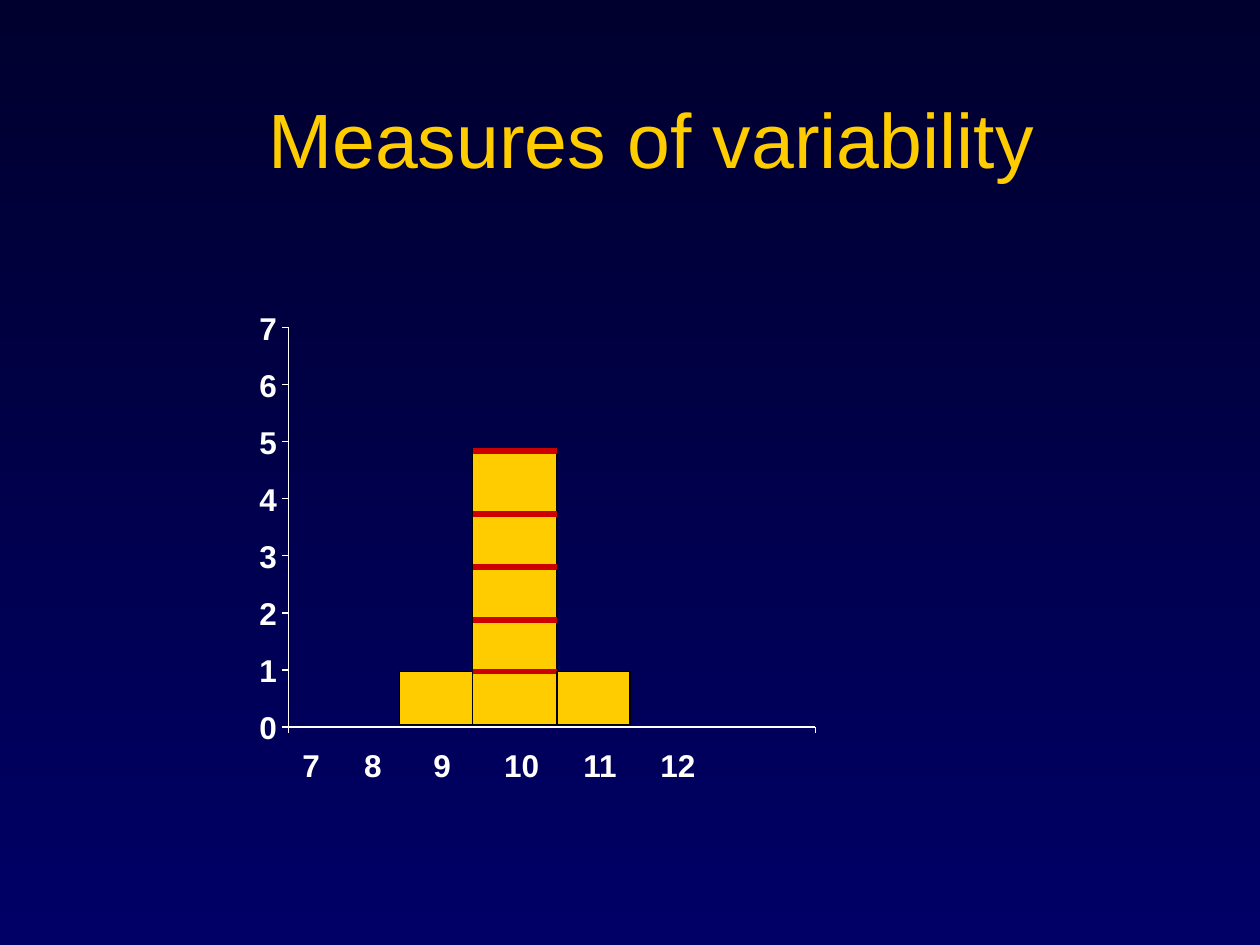
from lxml.etree import SubElement
from pptx import Presentation
from pptx.dml.color import RGBColor
from pptx.enum.shapes import MSO_CONNECTOR as Connector, MSO_SHAPE as Shape
from pptx.enum.text import MSO_ANCHOR as Anchor, MSO_AUTO_SIZE as AutoSize, PP_ALIGN as Align
from pptx.oxml.ns import qn
from pptx.util import Inches, Pt

GOLD, WHITE, BLACK, RED = "FFCC00", "FFFFFF", "000000", "CC0000"


def color(hex_value):
    return RGBColor.from_string(hex_value)


def format_text(paragraph, size, hex_value, bold=False):
    for run in paragraph.runs:
        run.font.name = "Arial"
        run.font.size = Pt(size)
        run.font.bold = bold
        run.font.color.rgb = color(hex_value)


def add_line(slide, x1, y1, x2, y2, hex_value=WHITE, width=0.75):
    line = slide.shapes.add_connector(
        Connector.STRAIGHT, Inches(x1), Inches(y1), Inches(x2), Inches(y2))
    line.line.color.rgb = color(hex_value)
    line.line.width = Pt(width)
    SubElement(line._element.spPr, qn("a:effectLst"))


def add_bar(slide, left, top, width, height):
    bar = slide.shapes.add_shape(
        Shape.RECTANGLE, Inches(left), Inches(top), Inches(width), Inches(height))
    bar.shadow.inherit = False
    bar.fill.solid()
    bar.fill.fore_color.rgb = color(GOLD)
    bar.line.color.rgb = color(BLACK)
    bar.line.width = Pt(0.75)


def add_label(slide, text, left, top, width, wrap=False):
    """Add a bold axis label without margins and return its text frame."""
    box = slide.shapes.add_textbox(Inches(left), Inches(top), Inches(width), Inches(0.3))
    frame = box.text_frame
    frame.margin_left = frame.margin_right = frame.margin_top = frame.margin_bottom = 0
    frame.word_wrap = wrap
    frame.auto_size = AutoSize.SHAPE_TO_FIT_TEXT
    frame.text = text
    format_text(frame.paragraphs[0], 18, WHITE, bold=True)
    return frame


def set_background(slide, top_color, bottom_color):
    fill = slide.background.fill
    fill.gradient()
    fill.gradient_angle = 270
    for stop, position, hex_value in zip(fill.gradient_stops, (0, 1), (top_color, bottom_color)):
        stop.position = position
        stop.color.rgb = color(hex_value)


def set_title(slide, text, left, top, width, height):
    title = slide.shapes.title
    title.left, title.top = Inches(left), Inches(top)
    title.width, title.height = Inches(width), Inches(height)
    title.text_frame.text = text
    title.text_frame.vertical_anchor = Anchor.MIDDLE
    paragraph = title.text_frame.paragraphs[0]
    paragraph.alignment = Align.CENTER
    format_text(paragraph, 44, GOLD)


def add_value_axis(slide, left, top, height, maximum):
    bottom = top + height
    add_line(slide, left, bottom, left, top)
    for value in range(maximum + 1):
        y = bottom - value * height / maximum
        add_line(slide, left, y, left - 0.05, y)
        add_label(slide, str(value), left - 0.23, y - 0.15, 0.14)


def add_category_axis(slide, left, top, width, categories, tab_stops):
    add_line(slide, left, top, left + width, top)
    for x in (left, left + width):
        add_line(slide, x, top, x, top + 0.05)
    frame = add_label(slide, "\t".join(categories), left + 0.04, top + 0.15, 3.19, wrap=True)
    frame.margin_left = Inches(0.07)
    properties = frame.paragraphs[0]._p.get_or_add_pPr()
    tab_list = SubElement(properties, qn("a:tabLst"))
    for stop in tab_stops:
        SubElement(tab_list, qn("a:tab"), pos=str(Inches(stop)), algn="l")


def add_bars(slide, left, bottom):
    """Draw the low bars beside the tall one, which red lines divide."""
    side_width, side_height = 0.58, 0.42
    middle_width, middle_height = 0.67, 2.17
    middle_left = left + side_width
    add_bar(slide, middle_left, bottom - middle_height, middle_width, middle_height)
    for height in (side_height, 0.83, 1.25, 1.67, middle_height):
        y = bottom - height
        add_line(slide, middle_left, y, middle_left + middle_width, y, RED, 3)
    for x in (left, middle_left + middle_width):
        add_bar(slide, x, bottom - side_height, side_width, side_height)


def add_histogram(slide, left, top, width, height):
    bottom = top + height
    add_value_axis(slide, left, top, height, 7)
    add_category_axis(slide, left, bottom, width,
                      ("7", "8", "9", "10", "11", "12"), (0.49, 1.04, 1.6, 2.23, 2.84))
    add_bars(slide, left + 0.88, bottom - 0.02)


def main():
    presentation = Presentation()
    presentation.slide_width, presentation.slide_height = Inches(10), Inches(7.5)
    slide = presentation.slides.add_slide(presentation.slide_layouts[5])
    set_background(slide, "00002F", "000066")
    set_title(slide, "Measures of variability", 0.67, 0.47, 9, 1.25)
    add_histogram(slide, 2.29, 2.6, 4.18, 3.17)
    presentation.save("out.pptx")


if __name__ == "__main__":
    main()
